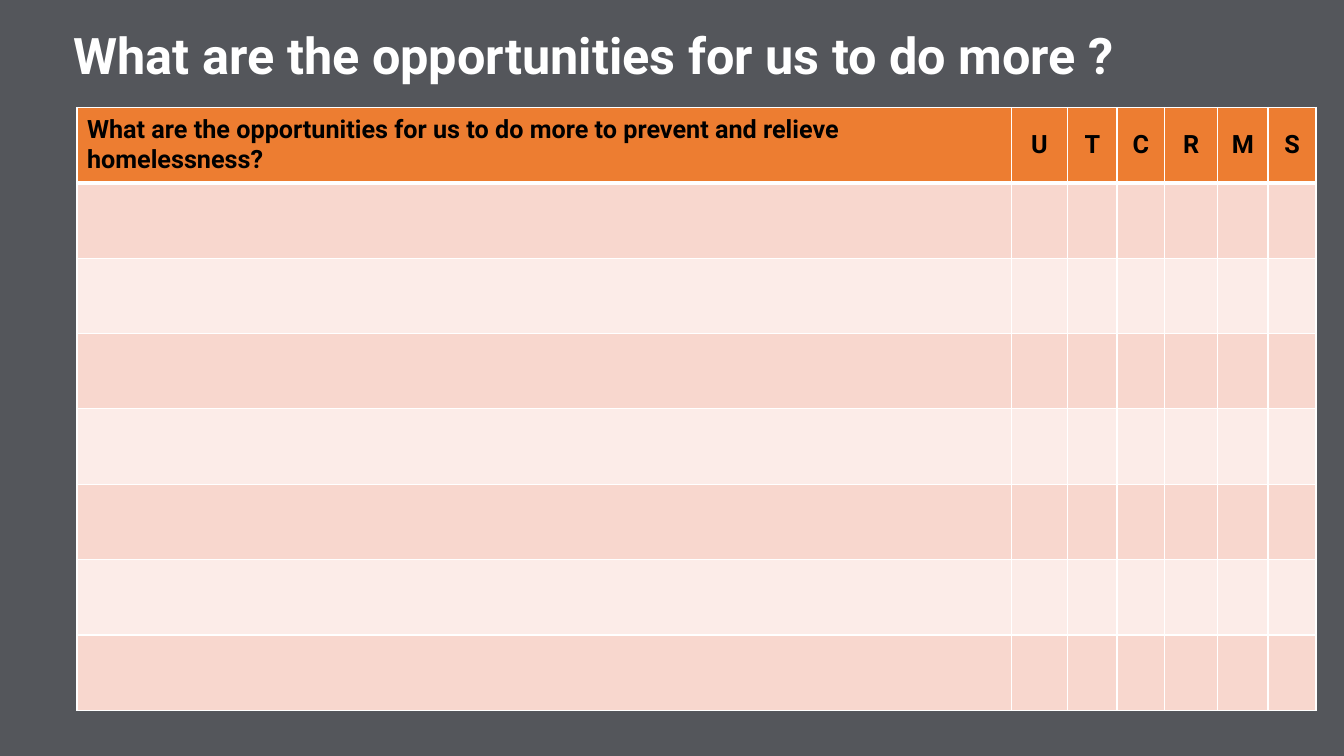
import pptx
import pptx.util
import pptx.dml.color
import pptx.enum.text
import pptx.oxml
import pptx.oxml.ns

Pt = pptx.util.Pt
Align = pptx.enum.text.PP_ALIGN
Anchor = pptx.enum.text.MSO_ANCHOR

TITLE = "What are the opportunities for us to do more ?"
HEADS = [
    ("What are the opportunities for us to do more to prevent and relieve homelessness?", 667.3),
    ("U", 40.5),
    ("T", 35.1),
    ("C", 34.1),
    ("R", 38),
    ("M", 35.8),
    ("S", 34.4),
]
BLANKS = 7

THEME = {
    "font": "Roboto",
    "back": "54565B",
    "head": "ED7D31",
    "bands": ("F8D7CE", "FCECE8"),
    "line": "FFFFFF",
    "title": ("FFFFFF", 36),
    "label": ("000000", 18),
    "thin": 1,
    "thick": 3,
}

SLIDE = (960, 540)
TITLE_BOX = (45.4, 10.8, 859, 54)
LEFT, TOP, ROW = 55, 76.7, 53.85


def color(code):
    return pptx.dml.color.RGBColor.from_string(code)


def paint(fill, code):
    fill.solid()
    fill.fore_color.rgb = color(code)


def write(para, text, style):
    code, size = style
    run = para.add_run()
    run.text = text
    run.font.name = THEME["font"]
    run.font.size = Pt(size)
    run.font.bold = True
    run.font.color.rgb = color(code)


def border(cell, top, base):
    props = cell._tc.get_or_add_tcPr()
    widths = {"L": THEME["thin"], "R": THEME["thin"], "T": top, "B": base}
    for side, width in widths.items():
        props.append(pptx.oxml.parse_xml(
            f'<a:ln{side} {pptx.oxml.ns.nsdecls("a")} w="{Pt(width)}">'
            f'<a:solidFill><a:srgbClr val="{THEME["line"]}"/></a:solidFill>'
            f'</a:ln{side}>'))


def add_grid(slide):
    count = BLANKS + 1
    total = sum(width for _, width in HEADS)
    frame = slide.shapes.add_table(
        count, len(HEADS), Pt(LEFT), Pt(TOP), Pt(total), Pt(ROW * count))
    grid = frame.table
    for col, (_, width) in zip(grid.columns, HEADS):
        col.width = Pt(width)
    for r, row in enumerate(grid.rows):
        row.height = Pt(ROW)
        top = THEME["thick"] if r == 1 else THEME["thin"]
        base = THEME["thick"] if r == 0 else THEME["thin"]
        shade = THEME["bands"][(r - 1) % 2] if r else THEME["head"]
        for cell in row.cells:
            border(cell, top, base)
            paint(cell.fill, shade)
    for c, (text, _) in enumerate(HEADS):
        cell = grid.cell(0, c)
        cell.vertical_anchor = Anchor.MIDDLE
        para = cell.text_frame.paragraphs[0]
        para.alignment = Align.CENTER if c else Align.LEFT
        write(para, text, THEME["label"])


def add_title(slide):
    box = slide.shapes.add_textbox(*map(Pt, TITLE_BOX))
    frame = box.text_frame
    frame.word_wrap = True
    frame.vertical_anchor = Anchor.BOTTOM
    para = frame.paragraphs[0]
    para.line_spacing = 0.9
    write(para, TITLE, THEME["title"])


def main():
    deck = pptx.Presentation()
    deck.slide_width, deck.slide_height = map(Pt, SLIDE)
    slide = deck.slides.add_slide(deck.slide_layouts[6])
    paint(slide.background.fill, THEME["back"])
    add_grid(slide)
    add_title(slide)
    deck.save("out.pptx")


if __name__ == "__main__":
    main()
